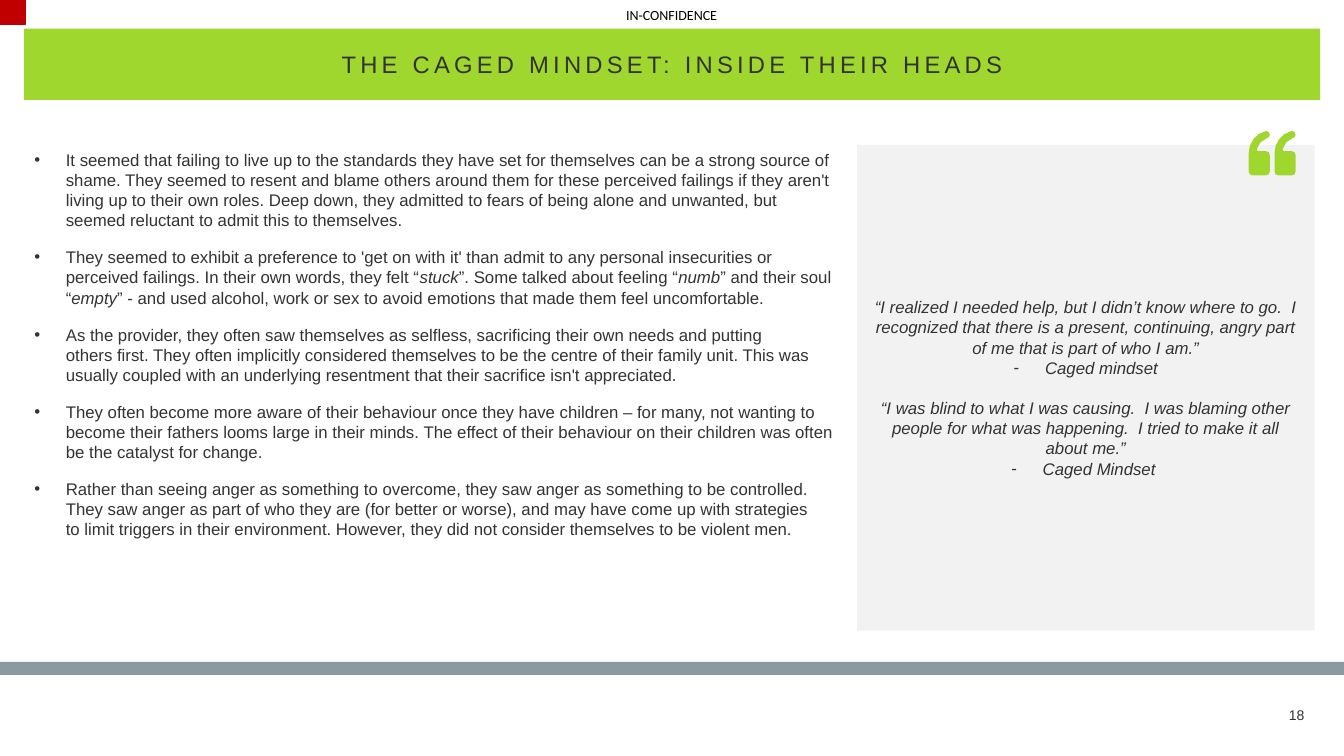
"""Build the slide on the caged mindset, with findings on the left and quotes on the right."""
import dataclasses
import typing

import lxml.etree
import pptx
import pptx.dml.color
import pptx.enum.shapes
import pptx.enum.text
import pptx.oxml.ns
import pptx.util

Cm = pptx.util.Cm
Pt = pptx.util.Pt
ALIGN = pptx.enum.text.PP_ALIGN
ANCHOR = pptx.enum.text.MSO_ANCHOR

GREEN, DARK, BLACK = "A0D72F", "333333", "000000"
GREY, SLATE, RED = "F2F2F2", "8B9A9F", "C00000"
HARD_SPACE = chr(160)


@dataclasses.dataclass
class Box:
    left: float
    top: float
    width: float
    height: float

    def lengths(self) -> list[int]:
        return [Cm(value) for value in dataclasses.astuple(self)]


@dataclasses.dataclass
class Line:
    """One paragraph: text between asterisks is italic, a tilde is a hard space."""
    text: str
    bullet: str = ""
    before: float = 0


@dataclasses.dataclass
class Style:
    size: float
    color: str = DARK
    font: str = "Arial"
    align: ALIGN = ALIGN.LEFT
    anchor: ANCHOR = ANCHOR.TOP
    inset: tuple[float, float] = (0.25, 0.13)
    wrap: bool = True
    tracking: int = 0


FINDINGS = [
    "It seemed that failing to live up to the~standards they have set for themselves~can be a strong source of shame. They seemed to resent and blame others around them for these perceived failings if they aren't living up to their own roles.~Deep down, they admitted to fears of being alone and unwanted, but seemed~reluctant to admit this to themselves.",
    "They seemed to exhibit a preference to 'get on with it' than admit to any personal insecurities or perceived failings. In their own words, they felt “*stuck*”. Some talked about feeling “*numb*” and their soul “*empty*” - and used~alcohol, work or sex to avoid emotions that made them feel uncomfortable.~~",
    "As the provider,~they often saw themselves as selfless, sacrificing~their own needs~and putting others~first. They often implicitly considered themselves to be the centre of their family unit. This was usually coupled with an underlying resentment that their sacrifice isn't appreciated.~",
    "They often become more aware of their behaviour once they have children – for many,~not wanting to become their fathers looms large in their minds.~The effect of their behaviour~on their children was often be the catalyst for change.~",
    "Rather than seeing anger as something to overcome, they saw anger as something to be controlled. They saw anger as part of who they are (for better or worse),~and may have~come up with strategies to~limit~triggers in their environment. However, they did not consider themselves to be violent men.",
]
QUOTES = [
    Line("*“I realized I needed help, but I didn’t know where to go.  I recognized that there is a present, continuing, angry part of me that is part of who I am.”*"),
    Line("*Caged mindset*", "-"),
    Line("*“I was blind to what I was causing.  I was blaming other people for what was happening.  I tried to make it all about me.”*", before=14.4),
    Line("*Caged Mindset *", "-"),
]

MARK_START = (0, 1.02)
MARK_EDGES = [
    ((0, 1.12), (0.1, 1.12)), (None, (0.43, 1.12)),
    ((0.53, 1.12), (0.53, 1.02)), (None, (0.53, 0.61)),
    ((0.53, 0.51), (0.43, 0.51)), (None, (0.26, 0.51)),
    ((0.2, 0.51), (0.2, 0.46)), ((0.26, 0.26), (0.46, 0.18)),
    ((0.53, 0.17), (0.53, 0.1)), ((0.53, 0), (0.43, 0)),
    ((0.22, 0.06), (0.11, 0.22)), ((0, 0.37), (0, 0.56)),
]
MARK_LEFT, MARK_TOP, MARK_STEP = 31.47, 3.3, 0.65


def rgb(color: str) -> pptx.dml.color.RGBColor:
    return pptx.dml.color.RGBColor.from_string(color)


def paint(shape: typing.Any, color: str) -> None:
    shape.shadow.inherit = False
    shape.fill.solid()
    shape.fill.fore_color.rgb = rgb(color)
    shape.line.fill.background()


def add_block(shapes: typing.Any, box: Box, color: str) -> typing.Any:
    block = shapes.add_shape(pptx.enum.shapes.MSO_SHAPE.RECTANGLE, *box.lengths())
    paint(block, color)
    return block


def add_bullet(paragraph: typing.Any, bullet: str) -> None:
    properties = paragraph._p.get_or_add_pPr()
    properties.set("marL", str(Cm(0.79)))
    properties.set("indent", str(-Cm(0.79)))
    for tag, key, value in (("a:buFont", "typeface", "Arial"), ("a:buChar", "char", bullet)):
        lxml.etree.SubElement(properties, pptx.oxml.ns.qn(tag)).set(key, value)


def write(frame: typing.Any, lines: list[Line], style: Style) -> None:
    across, down = (Cm(value) for value in style.inset)
    frame_format = {
        "auto_size": pptx.enum.text.MSO_AUTO_SIZE.NONE,
        "word_wrap": style.wrap, "vertical_anchor": style.anchor,
        "margin_left": across, "margin_right": across,
        "margin_top": down, "margin_bottom": down,
    }
    for name, value in frame_format.items():
        setattr(frame, name, value)
    for index, line in enumerate(lines):
        paragraph = frame.add_paragraph() if index else frame.paragraphs[0]
        paragraph.alignment = style.align
        if index and line.before:
            paragraph.space_before = Pt(line.before)
        if line.bullet:
            add_bullet(paragraph, line.bullet)
        for part, text in enumerate(line.text.replace("~", HARD_SPACE).split("*")):
            if not text:
                continue
            run = paragraph.add_run()
            run.text = text
            run_format = {"name": style.font, "size": Pt(style.size), "italic": part % 2 == 1}
            for name, value in run_format.items():
                setattr(run.font, name, value)
            run.font.color.rgb = rgb(style.color)
            if style.tracking:
                run._r.get_or_add_rPr().set("spc", str(style.tracking))


def add_text(shapes: typing.Any, box: Box, lines: list[Line], style: Style) -> None:
    write(shapes.add_textbox(*box.lengths()).text_frame, lines, style)


def mark_points(left: float) -> list[tuple[int, int]]:
    points, start = [MARK_START], MARK_START
    for control, end in MARK_EDGES:
        if control:
            points.append(tuple((a + 2 * b + c) / 4 for a, b, c in zip(start, control, end)))
        points.append(end)
        start = end
    return [(Cm(left + x), Cm(MARK_TOP + y)) for x, y in points]


def add_quote_marks(shapes: typing.Any) -> None:
    first, second = (mark_points(MARK_LEFT + MARK_STEP * index) for index in range(2))
    builder = shapes.build_freeform(*first[0])
    builder.add_line_segments(first[1:], close=True)
    builder.move_to(*second[0])
    builder.add_line_segments(second[1:], close=True)
    paint(builder.convert_to_shape(), GREEN)


def main() -> None:
    deck = pptx.Presentation()
    deck.slide_width, deck.slide_height = Cm(33.87), Cm(19.05)
    slide = deck.slides.add_slide(deck.slide_layouts[5])
    shapes = slide.shapes

    title = shapes.title
    title.left, title.top, title.width, title.height = Box(0.61, 0.72, 32.66, 1.8).lengths()
    paint(title, GREEN)
    write(title.text_frame, [Line("THE CAGED MINDSET: INSIDE THEIR HEADS")],
          Style(17, align=ALIGN.CENTER, anchor=ANCHOR.MIDDLE, tracking=300))

    add_text(shapes, Box(31.9, 17.75, 0.97, 0.53), [Line("18")],
             Style(10, align=ALIGN.RIGHT, anchor=ANCHOR.MIDDLE, inset=(0, 0)))
    add_block(shapes, Box(0, 16.68, 33.87, 0.33), SLATE)
    add_text(shapes, Box(15.78, 0.17, 2.39, 0.43), [Line("IN-CONFIDENCE")],
             Style(10, BLACK, "Calibri", inset=(0, 0), wrap=False))

    quote_panel = add_block(shapes, Box(21.6, 3.65, 11.53, 12.24), GREY)
    write(quote_panel.text_frame, QUOTES,
          Style(12, align=ALIGN.CENTER, anchor=ANCHOR.MIDDLE, inset=(0.41, 0.13)))
    add_text(shapes, Box(0.62, 3.64, 20.65, 11.71),
             [Line(finding, "•", 12) for finding in FINDINGS], Style(12))
    add_quote_marks(shapes)

    corner = add_block(shapes, Box(0, 0, 0.64, 0.61), RED)
    corner.line.color.rgb = rgb(RED)
    corner.line.width = Pt(1)
    deck.save("out.pptx")


if __name__ == "__main__":
    main()
